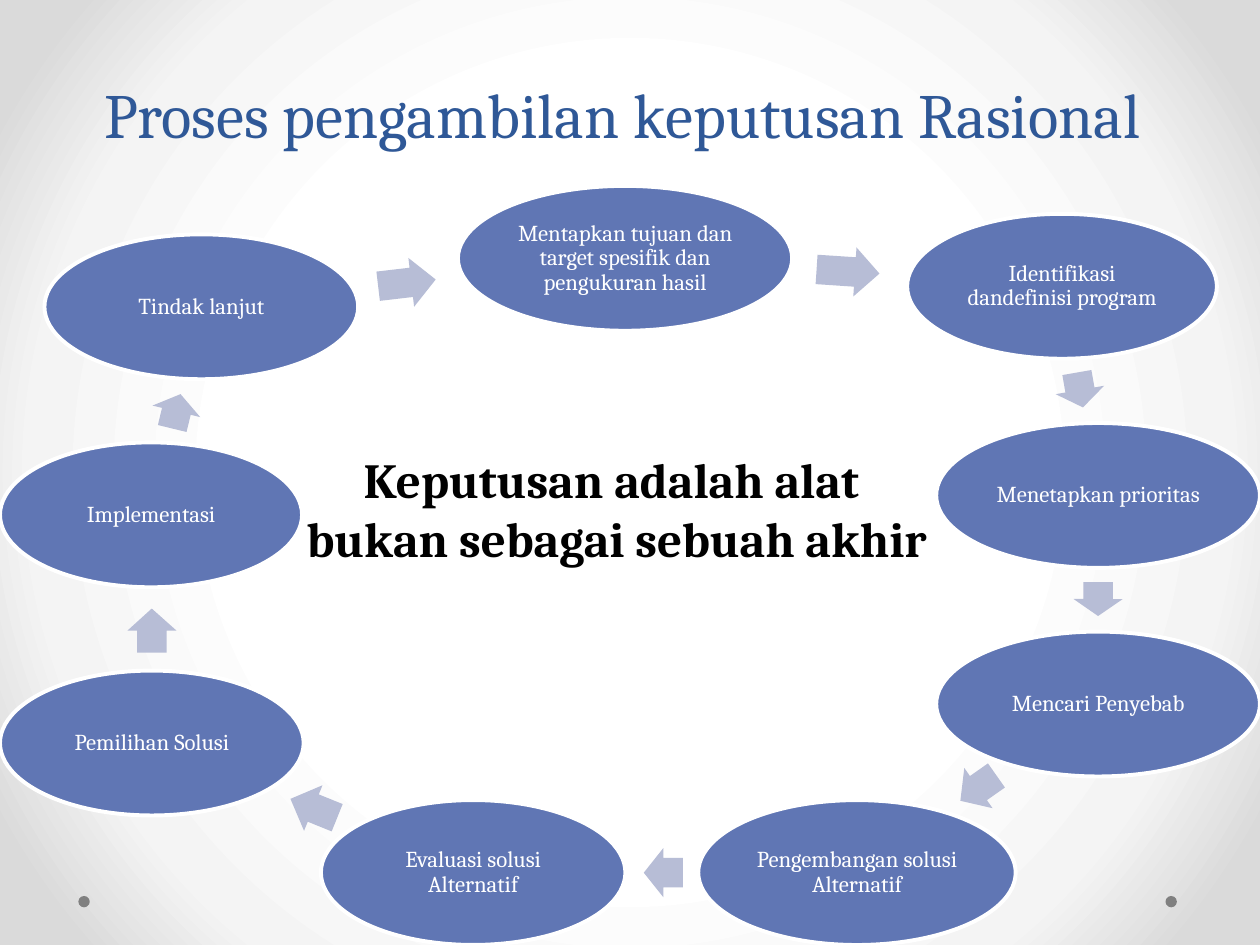
from typing import NamedTuple

from pptx import Presentation
from pptx.dml.color import RGBColor
from pptx.enum.shapes import MSO_SHAPE as Shape
from pptx.enum.text import MSO_ANCHOR as Anchor, MSO_AUTO_SIZE as AutoSize, PP_ALIGN as Align
from pptx.oxml import parse_xml
from pptx.oxml.ns import nsdecls
from pptx.util import Pt

COLORS = {
    "title": "2F5897",
    "stage": "6076B4",
    "arrow": "B7BDD6",
    "dot": "808080",
    "white": "FFFFFF",
    "black": "000000",
}
BACKDROP = {50: "FFFFFF", 76: "F4F4F4", 92: "DADADA"}
FONT = "Cambria"
STAGE_HEIGHT = 82.8
ARROW_HEIGHT = 28.1
DOT_SIZE = 6.5
DOT_TOP = 512


class Stage(NamedTuple):
    text: str
    left: float
    top: float
    width: float


class Arrow(NamedTuple):
    left: float
    top: float
    width: float
    rotation: float


STAGES = [
    Stage("Mentapkan tujuan dan target spesifik dan pengukuran hasil", 261.7, 106.2, 191),
    Stage("Identifikasi dandefinisi program", 518.4, 122.2, 177),
    Stage("Menetapkan prioritas", 535, 241.7, 185),
    Stage("Mencari Penyebab", 535, 360.9, 185),
    Stage("Pengembangan solusi Alternatif", 399, 457.2, 181.4),
    Stage("Evaluasi solusi Alternatif", 183.4, 457.2, 174),
    Stage("Pemilihan Solusi", 0, 383.2, 173.5),
    Stage("Implementasi", 0, 252.8, 172.6),
    Stage("Tindak lanjut", 25.4, 133.9, 179.3),
]
ARROWS = [
    Arrow(466.6, 141.1, 36, 3.8),
    Arrow(607, 208.8, 20.2, 80.1),
    Arrow(617.8, 328.3, 19.4, 90.1),
    Arrow(546.5, 436.3, 25.2, 144.9),
    Arrow(367.9, 484.6, 22.3, 180),
    Arrow(164.9, 447.8, 28.8, 202),
    Arrow(74.2, 346.3, 25.2, 269.8),
    Arrow(90.7, 221, 20.2, 283.6),
    Arrow(216, 147.6, 33.1, 353.3),
]


def color(name: str) -> RGBColor:
    return RGBColor.from_string(COLORS[name])


def set_background(slide) -> None:
    stops = "".join(
        f'<a:gs pos="{position * 1000}"><a:srgbClr val="{value}"/></a:gs>'
        for position, value in BACKDROP.items()
    )
    gradient = parse_xml(
        f'<a:gradFill {nsdecls("a")} rotWithShape="1"><a:gsLst>{stops}</a:gsLst>'
        '<a:path path="circle"><a:fillToRect l="50000" t="50000" r="50000" b="50000"/></a:path>'
        "</a:gradFill>"
    )
    slide.background.fill.solid()
    properties = slide.background._cSld.bg.bgPr
    properties.replace(properties[0], gradient)


def write_text(shape, text: str, *, size: float, fill: str, bold: bool = False,
               anchor=Anchor.TOP, wrap: bool = True, inset: float | None = None,
               spacing=None) -> None:
    frame = shape.text_frame
    frame.word_wrap = wrap
    frame.vertical_anchor = anchor
    if inset is not None:
        frame.margin_left = frame.margin_right = Pt(inset)
        frame.margin_top = frame.margin_bottom = Pt(inset)
    frame.text = text
    for paragraph in frame.paragraphs:
        paragraph.alignment = Align.CENTER
        paragraph.line_spacing = spacing
        for run in paragraph.runs:
            run.font.name = FONT
            run.font.size = Pt(size)
            run.font.bold = bold
            run.font.color.rgb = color(fill)


def add_text_box(slide, left: float, top: float, width: float, height: float):
    return slide.shapes.add_textbox(Pt(left), Pt(top), Pt(width), Pt(height))


def add_filled_shape(slide, kind, left: float, top: float, width: float, height: float,
                     fill: str):
    shape = slide.shapes.add_shape(kind, Pt(left), Pt(top), Pt(width), Pt(height))
    shape.shadow.inherit = False
    shape.fill.solid()
    shape.fill.fore_color.rgb = color(fill)
    shape.line.fill.background()
    return shape


def add_stage(slide, stage: Stage) -> None:
    shape = add_filled_shape(slide, Shape.OVAL, stage.left, stage.top, stage.width,
                             STAGE_HEIGHT, "stage")
    shape.line.color.rgb = color("white")
    shape.line.width = Pt(2.25)
    write_text(shape, stage.text, size=13, fill="white", anchor=Anchor.MIDDLE,
               inset=1.3, spacing=0.9)


def add_arrow(slide, arrow: Arrow) -> None:
    shape = add_filled_shape(slide, Shape.RIGHT_ARROW, arrow.left, arrow.top, arrow.width,
                             ARROW_HEIGHT, "arrow")
    shape.adjustments[0] = 0.6
    shape.adjustments[1] = 0.5
    shape.rotation = arrow.rotation


def main() -> None:
    presentation = Presentation()
    presentation.slide_width, presentation.slide_height = Pt(720), Pt(540)
    slide = presentation.slides.add_slide(presentation.slide_layouts[6])
    set_background(slide)

    for left in (666, 44.8):
        add_filled_shape(slide, Shape.OVAL, left, DOT_TOP, DOT_SIZE, DOT_SIZE, "dot")

    title = add_text_box(slide, -4.3, 0, 720, 90)
    write_text(title, "Proses pengambilan keputusan Rasional", size=36, fill="title",
               anchor=Anchor.BOTTOM, spacing=Pt(58))

    for stage, arrow in zip(STAGES, ARROWS):
        add_stage(slide, stage)
        add_arrow(slide, arrow)

    message = add_text_box(slide, 163.4, 253.4, 378, 75)
    write_text(message, "Keputusan adalah alat \nbukan sebagai sebuah akhir", size=28,
               fill="black", bold=True, wrap=False)
    message.text_frame.auto_size = AutoSize.SHAPE_TO_FIT_TEXT

    presentation.save("out.pptx")


if __name__ == "__main__":
    main()
